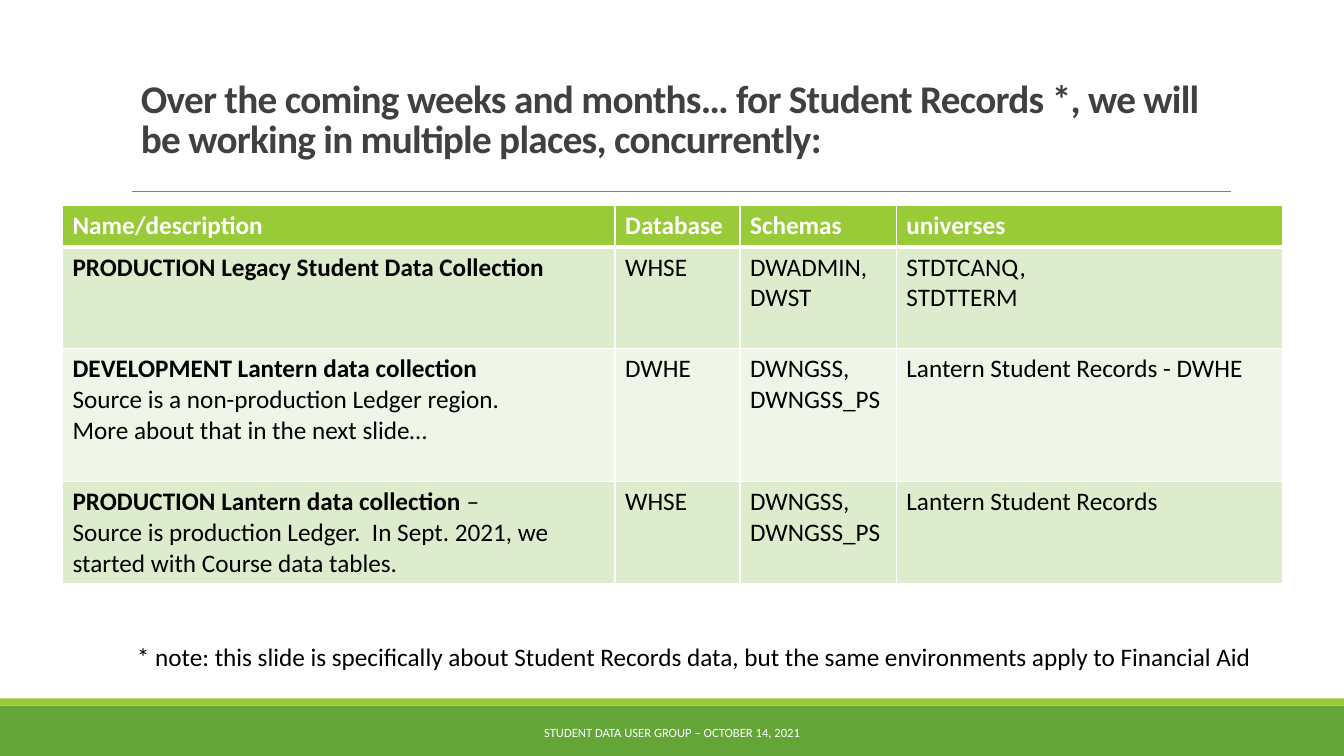
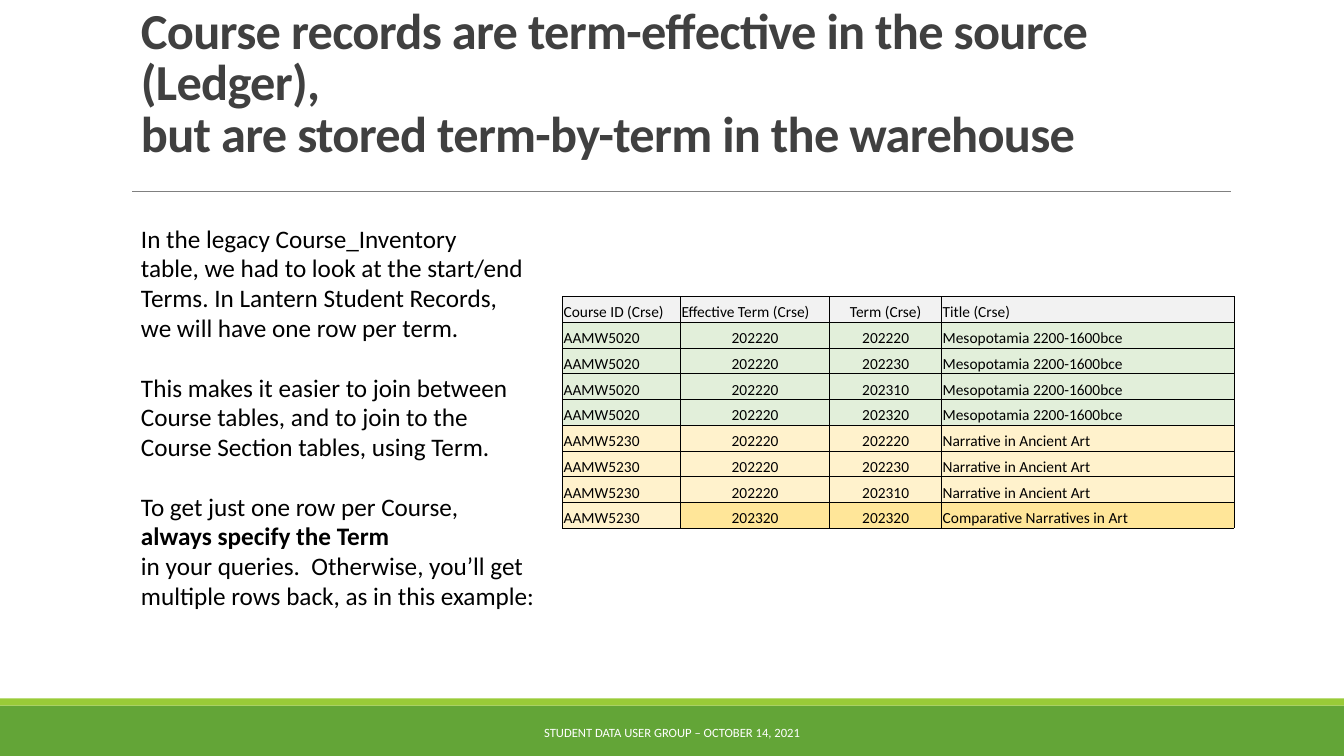
from lxml import etree
from pptx import Presentation
from pptx import util as u
from pptx.dml.color import RGBColor
from pptx.enum import shapes, text
from pptx.oxml import ns

FONT = "Calibri"
BLACK, WHITE = "000000", "FFFFFF"
GREEN, LIME = "63A537", "99CB38"
TITLE_GRAY, RULE_GRAY = "404040", "808080"
BAND_DARK, BAND_LIGHT = "DEECCE", "EFF6E8"
HEADER_GRAY, PALE_GREEN, PALE_YELLOW, YELLOW = "F2F2F2", "E2EFDA", "FFF2CC", "FFE699"
FOOTER = "STUDENT DATA USER GROUP – OCTOBER 14, 2021"
CENTER = text.PP_ALIGN.CENTER
MIDDLE, BOTTOM = text.MSO_ANCHOR.MIDDLE, text.MSO_ANCHOR.BOTTOM

ENVIRONMENTS = [
    ["**Name/description**", "**Database**", "**Schemas**", "**universes**"],
    ["**PRODUCTION Legacy Student Data Collection**", "WHSE",
     ["DWADMIN,", "DWST"], ["STDTCANQ,", "STDTTERM"]],
    [["**DEVELOPMENT Lantern data collection**",
      "Source is a non-production Ledger region.",
      "More about that in the next slide…"],
     "DWHE", "DWNGSS, DWNGSS_PS", "Lantern Student Records - DWHE"],
    [["**PRODUCTION Lantern data collection **–",
      "Source is production Ledger.  In Sept. 2021, we started with Course data tables."],
     "WHSE", "DWNGSS, DWNGSS_PS", "Lantern Student Records"],
]
COURSE_HEADER = ["Course ID (Crse)", "Effective Term (Crse)", "Term (Crse)", "Title (Crse)"]
TERMS = ["202220", "202230", "202310", "202320"]
COURSE_NOTES = [
    "In the legacy Course_Inventory\ntable, we had to look at the start/end\n"
    "Terms. In Lantern Student Records,\nwe will have one row per term.",
    "This makes it easier to join between\nCourse tables, and to join to the\n"
    "Course Section tables, using Term.",
    "To get just one row per Course,\n**always specify the Term**\n"
    "in your queries.  Otherwise, you’ll get multiple rows back, as in this example:",
]


def color(value):
    """Return the colour for a hex string."""
    return RGBColor.from_string(value)


def write(frame, content, size=18, ink=BLACK, align=None, line=None, after=0, tracking=None):
    """Write paragraphs into a frame; pairs of ** enclose bold words."""
    paras = [content] if isinstance(content, str) else content
    for index, words in enumerate(paras):
        para = frame.paragraphs[0] if index == 0 else frame.add_paragraph()
        para.alignment = align
        para.line_spacing = line
        para.space_after = u.Pt(after)
        for part, chunk in enumerate(words.split("**")):
            for number, piece in enumerate(chunk.split("\n")):
                if number:
                    para.add_line_break()
                if not piece:
                    continue
                span = para.add_run()
                span.text = piece
                span.font.name = FONT
                span.font.size = u.Pt(size)
                span.font.bold = part % 2 == 1
                span.font.color.rgb = color(ink)
                if tracking:
                    span._r.get_or_add_rPr().set("spc", str(round(tracking * 100)))


def add_text(page, place, content, anchor=text.MSO_ANCHOR.TOP, wrap=True, **style):
    """Add a text box at left, top, width, height."""
    box = page.shapes.add_textbox(*map(u.Inches, place))
    box.text_frame.word_wrap = wrap
    box.text_frame.vertical_anchor = anchor
    write(box.text_frame, content, **style)


def add_band(page, top, height, fill):
    """Add a full-width coloured band."""
    band = page.shapes.add_shape(shapes.MSO_SHAPE.RECTANGLE, 0, u.Inches(top),
                                 u.Inches(13.33), u.Inches(height))
    band.shadow.inherit = False
    band.fill.solid()
    band.fill.fore_color.rgb = color(fill)
    band.line.fill.background()


def add_rule(page, left, right, top):
    """Add the thin line under the title."""
    rule = page.shapes.add_connector(shapes.MSO_CONNECTOR.STRAIGHT, u.Inches(left),
                                     u.Inches(top), u.Inches(right), u.Inches(top))
    rule.line.color.rgb = color(RULE_GRAY)
    rule.line.width = u.Pt(0.5)
    etree.SubElement(rule._element.spPr, ns.qn("a:effectLst"))


def add_page(deck, title, place, size):
    """Add a page with its bands, rule, title and footer."""
    page = deck.slides.add_slide(deck.slide_layouts[6])
    add_band(page, 7, 0.5, GREEN)
    add_band(page, 6.93, 0.07, LIME)
    add_rule(page, 1.31, 12.21, 1.9)
    add_text(page, place, f"**{title}**", anchor=BOTTOM, size=size, ink=TITLE_GRAY,
             line=0.85, tracking=-0.5)
    add_text(page, (4.03, 7.07, 5.27, 0.4), FOOTER, anchor=MIDDLE, size=9,
             ink=WHITE, align=CENTER)
    return page


def add_grid(page, left, top, widths, heights):
    """Add a table with the given column widths and row heights."""
    grid = page.shapes.add_table(len(heights), len(widths), u.Inches(left), u.Inches(top),
                                 u.Inches(sum(widths)), u.Inches(sum(heights))).table
    grid.horz_banding = False
    for column, width in zip(grid.columns, widths):
        column.width = u.Inches(width)
    for row, height in zip(grid.rows, heights):
        row.height = u.Inches(height)
    return grid


def paint_cell(cell, fill, edge, **widths):
    """Fill a cell and draw its borders, with widths by side in points."""
    props = cell._tc.get_or_add_tcPr()
    for side in "LRTB":
        line = etree.SubElement(props, ns.qn(f"a:ln{side}"), w=str(u.Pt(widths[side])))
        solid = etree.SubElement(line, ns.qn("a:solidFill"))
        etree.SubElement(solid, ns.qn("a:srgbClr"), val=edge)
    cell.fill.solid()
    cell.fill.fore_color.rgb = color(fill)


def add_environments(page):
    """Add the table of databases, schemas and universes."""
    grid = add_grid(page, 0.62, 2.04, [5.48, 1.24, 1.55, 3.83], [0.41, 1.01, 1.32, 1.01])
    fills = [LIME, BAND_DARK, BAND_LIGHT, BAND_DARK]
    for r, values in enumerate(ENVIRONMENTS):
        for c, value in enumerate(values):
            cell = grid.cell(r, c)
            paint_cell(cell, fills[r], WHITE, L=1, R=1,
                       T=3 if r == 1 else 1, B=3 if r == 0 else 1)
            write(cell.text_frame, value, ink=BLACK if r else WHITE)


def course_rows():
    """Return the values and fills of each course table row."""
    rows = [(COURSE_HEADER, [HEADER_GRAY] * 4)]
    rows += [(["AAMW5020", TERMS[0], term, "Mesopotamia 2200-1600bce"], [PALE_GREEN] * 4)
             for term in TERMS]
    rows += [(["AAMW5230", TERMS[0], term, "Narrative in Ancient Art"], [PALE_YELLOW] * 4)
             for term in TERMS[:3]]
    rows.append((["AAMW5230", TERMS[3], TERMS[3], "Comparative Narratives in Art"],
                 [PALE_YELLOW] + [YELLOW] * 3))
    return rows


def add_courses(page):
    """Add the example table of courses by term."""
    rows = course_rows()
    grid = add_grid(page, 5.58, 2.94, [1.17, 1.48, 1.11, 2.9], [2.3 / len(rows)] * len(rows))
    for r, (values, fills) in enumerate(rows):
        for c, (value, fill) in enumerate(zip(values, fills)):
            cell = grid.cell(r, c)
            cell.margin_left = cell.margin_right = cell.margin_top = u.Inches(0.01)
            cell.margin_bottom = 0
            cell.vertical_anchor = BOTTOM
            paint_cell(cell, fill, BLACK, L=0.5, R=0.5, T=0.5, B=0.5)
            centered = c == 2 or (c == 1 and r > 0)
            write(cell.text_frame, value, size=11, align=CENTER if centered else None)


def main():
    """Build and save the deck."""
    deck = Presentation()
    deck.slide_width, deck.slide_height = u.Inches(13.33), u.Inches(7.5)

    page = add_page(deck, "Over the coming weeks and months… for Student Records *, "
                    "we will be working in multiple places, concurrently:",
                    (1.3, 0.77, 10.93, 0.88), 28)
    add_environments(page)
    add_text(page, (1.26, 6.31, 11.39, 0.4),
             "* note: this slide is specifically about Student Records data, "
             "but the same environments apply to Financial Aid", wrap=False)

    page = add_page(deck, "Course records are term-effective in the source (Ledger),\n"
                    "but are stored term-by-term in the warehouse",
                    (1.3, 0.47, 11.12, 1.19), 36)
    add_text(page, (1.3, 2.18, 4.28, 4.04), COURSE_NOTES, line=0.98, after=21.6)
    add_courses(page)

    deck.save("out.pptx")


if __name__ == "__main__":
    main()
